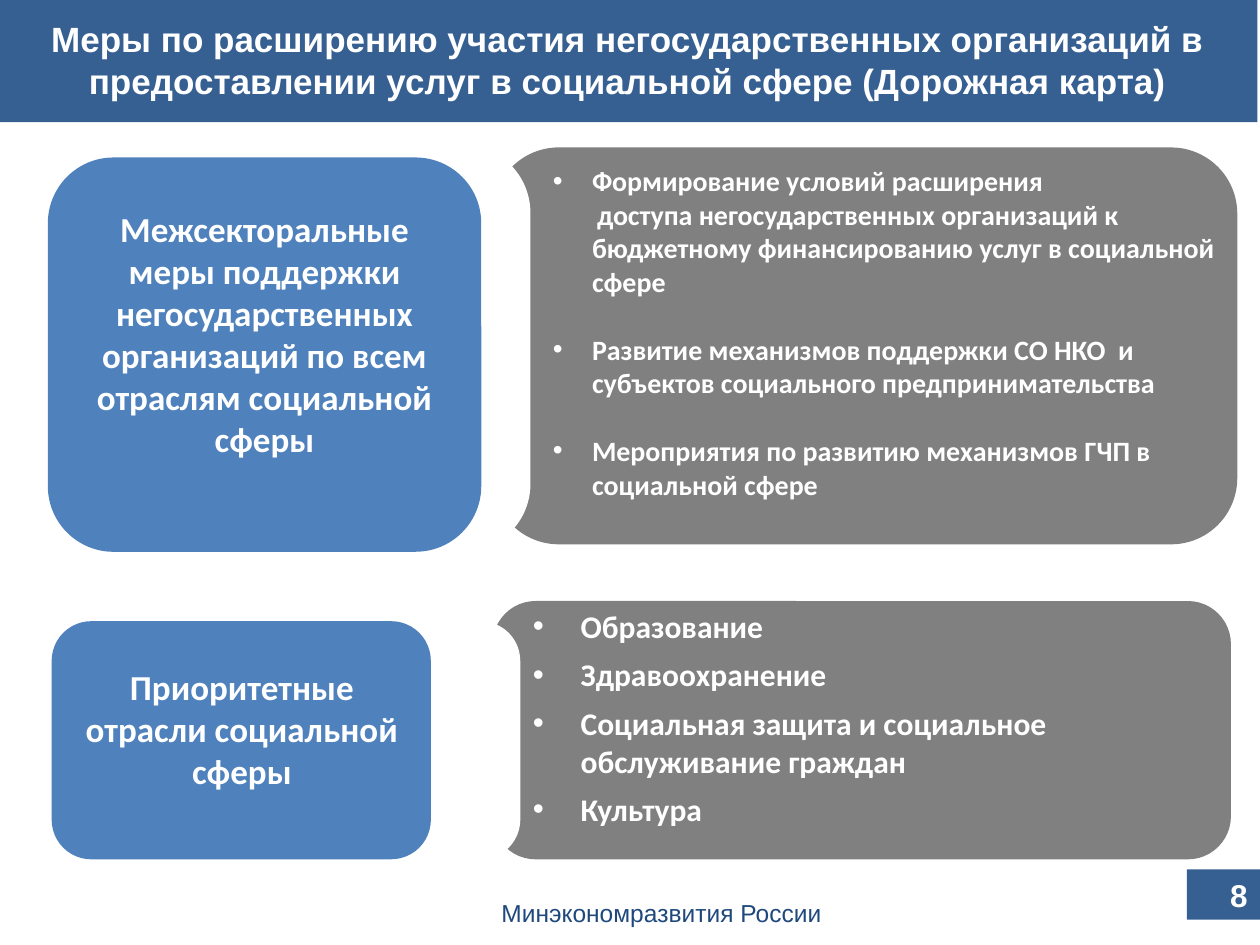
from lxml import etree
from pptx import Presentation
from pptx.enum import shapes, text
from pptx.dml.color import RGBColor
from pptx.oxml.ns import qn
from pptx.util import Inches, Pt

COLORS = {"navy": "376092", "blue": "4F81BD", "gray": "808080",
          "white": "FFFFFF", "footer": "1F497D"}
ALIGN = text.PP_ALIGN
ROUND = shapes.MSO_SHAPE.ROUNDED_RECTANGLE
RECT = shapes.MSO_SHAPE.RECTANGLE

prs = Presentation()
prs.slide_width, prs.slide_height = Inches(10), Inches(7.5)
s = prs.slides.add_slide(prs.slide_layouts[5])


def add_block(kind, box, color):
    sp = s.shapes.add_shape(kind, *map(Inches, box))
    sp.shadow.inherit = False
    sp.fill.solid()
    sp.fill.fore_color.rgb = RGBColor.from_string(COLORS[color])
    sp.line.fill.background()
    return sp


def write(sp, lines, size, font="Calibri", color="white", bold=True,
          align=ALIGN.LEFT, anchor=text.MSO_ANCHOR.TOP, hang=0):
    """Fill a shape from (text, space before, bullet, extra first-line indent)."""
    tf = sp.text_frame
    tf.word_wrap = True
    tf.vertical_anchor = anchor
    for i, (line, before, bullet, extra) in enumerate(lines):
        p = tf.paragraphs[0] if i == 0 else tf.add_paragraph()
        p.alignment = align
        p.space_before = Pt(before)
        if hang:
            ppr = p._p.get_or_add_pPr()
            ppr.set("marL", str(Inches(hang)))
            ppr.set("indent", str(Inches(-hang if bullet else extra)))
            if bullet:
                etree.SubElement(ppr, qn("a:buFont")).set("typeface", "Arial")
                etree.SubElement(ppr, qn("a:buChar")).set("char", "•")
        r = p.add_run()
        r.text = line
        for name, value in {"name": font, "size": Pt(size), "bold": bold}.items():
            setattr(r.font, name, value)
        r.font.color.rgb = RGBColor.from_string(COLORS[color])


# Header
title = s.shapes.title
title_box = {"left": -0.02, "top": -0.02, "width": 10, "height": 0.99}
for name, value in title_box.items():
    setattr(title, name, Inches(value))
title.fill.solid()
title.fill.fore_color.rgb = RGBColor.from_string(COLORS["navy"])
write(title, [("Меры по расширению участия негосударственных организаций в "
               "предоставлении услуг в социальной сфере (Дорожная карта)", 0, False, 0)],
      20, font="Arial", align=ALIGN.CENTER, anchor=text.MSO_ANCHOR.MIDDLE)

# Each row: gray detail panel, white notch cut into it, blue heading panel
rows = [
    {"panel": (3.91, 1.17, 5.91, 3.15), "notch": (0.43, 1.15, 3.78, 3.23),
     "heading": (0.38, 1.25, 3.44, 3.13), "heading_text": (0.52, 1.6, 3.16, 2.12),
     "label": "Межсекторальные меры поддержки негосударственных организаций "
              "по всем отраслям социальной сферы",
     "detail_text": (4.29, 1.25, 5.72, 2.95), "size": 16, "hang": 0.31,
     "details": [
         ("Формирование условий расширения", 0, True, 0),
         ("доступа негосударственных организаций к бюджетному финансированию "
          "услуг в социальной сфере", 0, False, 0.04),
         ("Развитие механизмов поддержки СО НКО  и субъектов социального "
          "предпринимательства", 19.5, True, 0),
         ("Мероприятия по развитию механизмов ГЧП в социальной сфере", 19.5, True, 0)]},
    {"panel": (3.91, 4.77, 5.86, 2.05), "notch": (0.6, 4.93, 3.53, 1.89),
     "heading": (0.41, 4.93, 3.01, 1.89), "heading_text": (0.48, 5.23, 2.88, 1.11),
     "label": "Приоритетные отрасли социальной сферы",
     "detail_text": (4.13, 4.77, 5.11, 1.87), "size": 18, "hang": 0.38,
     "details": [
         ("Образование", 0, True, 0),
         ("Здравоохранение", 6, True, 0),
         ("Социальная защита и социальное обслуживание граждан", 6, True, 0),
         ("Культура", 6, True, 0)]},
]
for row in rows:
    for part, color in (("panel", "gray"), ("notch", "white"), ("heading", "blue")):
        add_block(ROUND, row[part], color)
    label = s.shapes.add_textbox(*map(Inches, row["heading_text"]))
    write(label, [(row["label"], 0, False, 0)], 20, align=ALIGN.CENTER)
    details = s.shapes.add_textbox(*map(Inches, row["detail_text"]))
    write(details, row["details"], row["size"], hang=row["hang"])

# Page number and footer
number = add_block(RECT, (9.42, 6.9, 0.58, 0.4), "navy")
write(number, [("8", 0, False, 0)], 18, font="Arial", align=ALIGN.RIGHT,
      anchor=text.MSO_ANCHOR.MIDDLE)
footer = s.shapes.add_textbox(*map(Inches, (3.04, 7.08, 4.42, 0.28)))
write(footer, [("Минэкономразвития России", 0, False, 0)], 14, font="Arial",
      color="footer", bold=False, align=ALIGN.CENTER)

prs.save("out.pptx")
